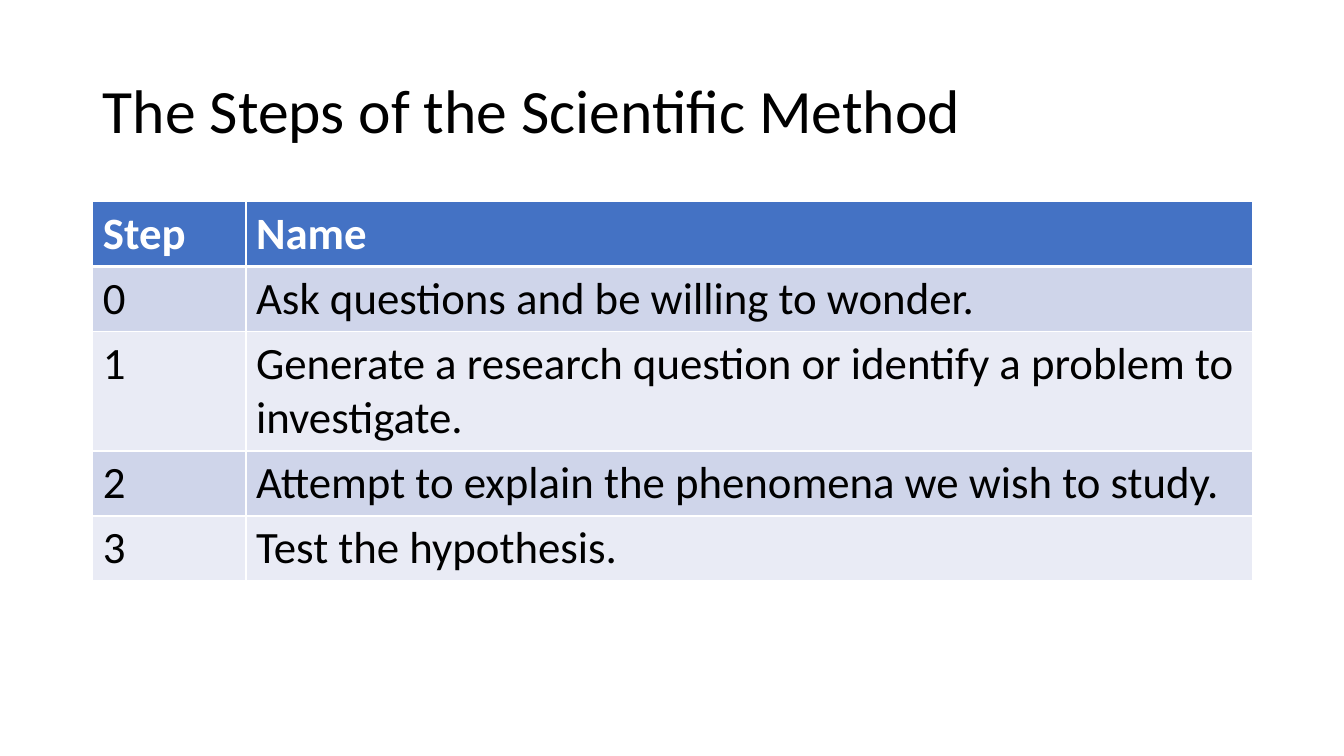
import pptx
import pptx.util
import pptx.dml.color
import pptx.enum.text
import pptx.oxml
from dataclasses import dataclass
from pptx.oxml import ns

TITLE = "The Steps of the Scientific Method"
HEADINGS = ("Step", "Name")
STEPS = [
    "Ask questions and be willing to wonder.",
    "Generate a research question or identify a problem to investigate.",
    "Attempt to explain the phenomena we wish to study.",
    "Test the hypothesis.",
]


@dataclass(frozen=True)
class Theme:
    font: str = "Calibri"
    title_size: int = 44
    table_size: int = 32
    ink: str = "000000"
    paper: str = "FFFFFF"
    header: str = "4472C4"
    bands: tuple = ("CFD5EA", "E9EBF5")
    rule: int = 1
    header_rule: int = 3


THEME = Theme()
WIDTH, HEIGHT = 13.33, 7.5
MARGIN = 0.92
CONTENT_WIDTH = 11.5
TITLE_TOP, TITLE_HEIGHT = 0.4, 1.45
TABLE_TOP = 2
STEP_WIDTH = 1.52
ROW_HEIGHT = 0.41  # minimum: rows grow to fit their text

inches = pptx.util.Inches


def rgb(colour):
    return pptx.dml.color.RGBColor.from_string(colour)


def write(frame, text, size, colour=THEME.ink, bold=False, line_spacing=None):
    frame.word_wrap = True
    paragraph = frame.paragraphs[0]
    paragraph.alignment = pptx.enum.text.PP_ALIGN.LEFT
    paragraph.line_spacing = line_spacing
    run = paragraph.add_run()
    run.text = text
    run.font.name = THEME.font
    run.font.size = pptx.util.Pt(size)
    run.font.bold = bold
    run.font.color.rgb = rgb(colour)


def border(cell, **widths):
    """Draw cell edges; widths in points are given in the order L, R, T, B."""
    properties = cell._tc.get_or_add_tcPr()
    for position, (side, width) in enumerate(widths.items()):
        line = pptx.oxml.parse_xml(
            f'<a:ln{side} {ns.nsdecls("a")} w="{pptx.util.Pt(width)}">'
            f'<a:solidFill><a:srgbClr val="{THEME.paper}"/></a:solidFill>'
            f'</a:ln{side}>')
        properties.insert(position, line)


def add_title(slide):
    title = slide.shapes.title
    title.left, title.top = inches(MARGIN), inches(TITLE_TOP)
    title.width, title.height = inches(CONTENT_WIDTH), inches(TITLE_HEIGHT)
    frame = title.text_frame
    frame.auto_size = pptx.enum.text.MSO_AUTO_SIZE.NONE
    frame.vertical_anchor = pptx.enum.text.MSO_ANCHOR.MIDDLE
    write(frame, TITLE, THEME.title_size, line_spacing=0.9)


def add_steps(slide):
    rows = [HEADINGS] + [(str(number), name) for number, name in enumerate(STEPS)]
    table = slide.shapes.add_table(
        len(rows), len(HEADINGS), inches(MARGIN), inches(TABLE_TOP),
        inches(CONTENT_WIDTH), inches(ROW_HEIGHT * len(rows))).table
    for column, width in zip(table.columns, (STEP_WIDTH, CONTENT_WIDTH - STEP_WIDTH)):
        column.width = inches(width)

    for r, row in enumerate(rows):
        is_header = r == 0
        fill = THEME.header if is_header else THEME.bands[(r - 1) % 2]
        for c, text in enumerate(row):
            cell = table.cell(r, c)
            cell.fill.solid()
            cell.fill.fore_color.rgb = rgb(fill)
            write(cell.text_frame, text, THEME.table_size, bold=is_header,
                  colour=THEME.paper if is_header else THEME.ink)
            border(cell, L=THEME.rule, R=THEME.rule,
                   T=THEME.header_rule if r == 1 else THEME.rule,
                   B=THEME.header_rule if is_header else THEME.rule)


def main():
    deck = pptx.Presentation()
    deck.slide_width, deck.slide_height = inches(WIDTH), inches(HEIGHT)
    slide = deck.slides.add_slide(deck.slide_layouts.get_by_name("Title Only"))
    add_title(slide)
    add_steps(slide)
    deck.save("out.pptx")


if __name__ == "__main__":
    main()
